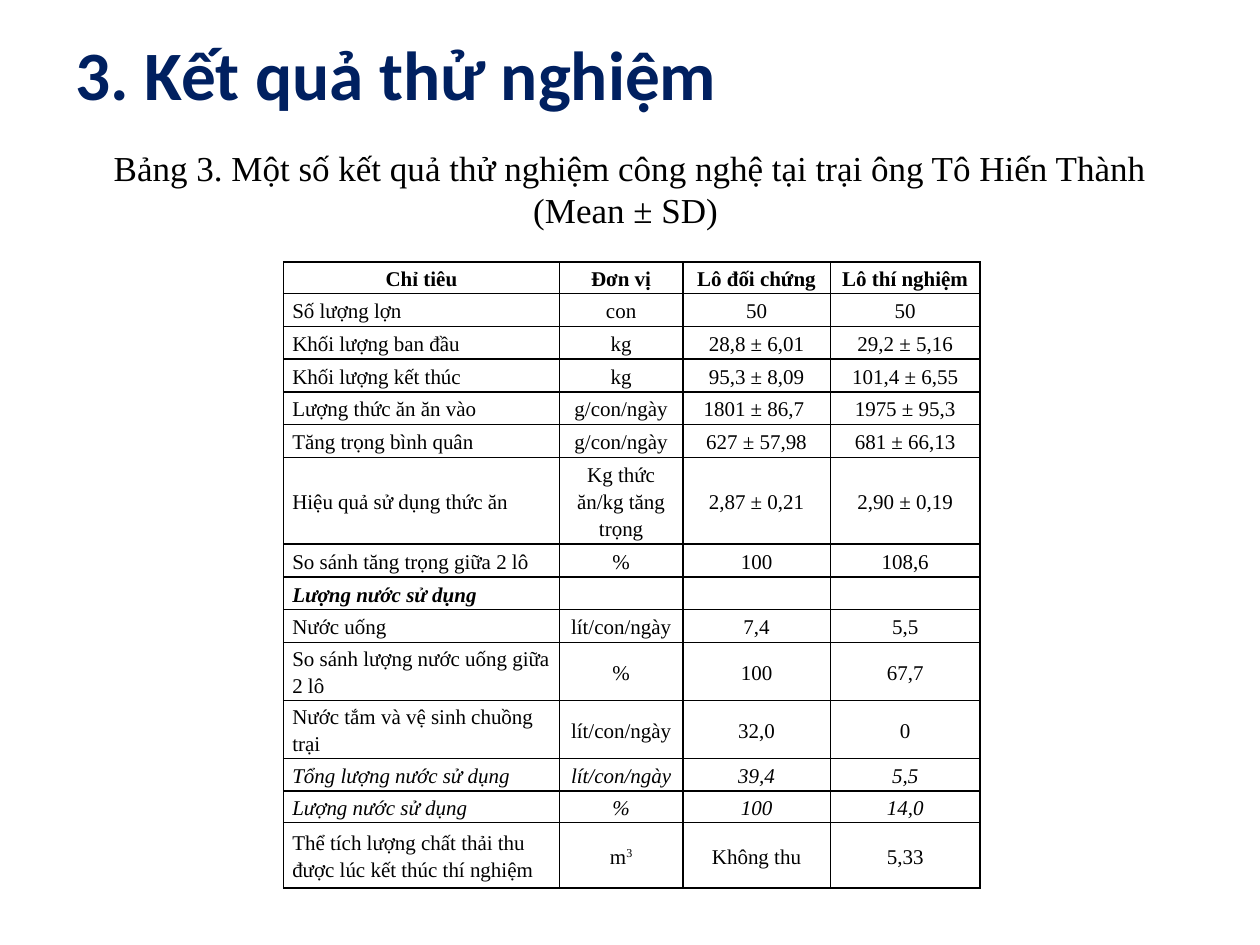
import pptx
import pptx.dml.color
import pptx.enum.text
import pptx.oxml.ns
import pptx.util
from lxml import etree

Inches, Pt = pptx.util.Inches, pptx.util.Pt
ALIGN = pptx.enum.text.PP_ALIGN
ANCHOR = pptx.enum.text.MSO_ANCHOR
qn = pptx.oxml.ns.qn

# Content
COLORS = {"title": "002060", "text": "000000", "border": "000000"}
BODY_FONT = "Times New Roman"
HEADING = "3. Kết quả thử nghiệm"
CAPTION = [
    "Bảng 3. Một số kết quả thử nghiệm công nghệ tại trại ông Tô Hiến Thành",
    "(Mean ± SD) ",
]
COLUMN_WIDTHS = [2.19, 0.98, 1.17, 1.19]
# Each row: height, style letters (b = bold, i = italic), cells
RESULTS = [
    (0.25, "b", ["Chỉ tiêu", "Đơn vị", "Lô đối chứng", "Lô thí nghiệm"]),
    (0.26, "", ["Số lượng lợn", "con", "50", "50"]),
    (0.26, "", ["Khối lượng ban đầu", "kg", "28,8 ± 6,01", "29,2 ± 5,16"]),
    (0.26, "", ["Khối lượng kết thúc", "kg", "95,3 ± 8,09", "101,4 ± 6,55"]),
    (0.26, "", ["Lượng thức ăn ăn vào", "g/con/ngày", "1801 ± 86,7 ", "1975 ± 95,3"]),
    (0.26, "", ["Tăng trọng bình quân", "g/con/ngày", "627 ± 57,98", "681 ± 66,13"]),
    (0.68, "", ["Hiệu quả sử dụng thức ăn", "Kg thức ăn/kg tăng trọng",
                "2,87 ± 0,21", "2,90 ± 0,19"]),
    (0.26, "", ["So sánh tăng trọng giữa 2 lô", "%", "100", "108,6"]),
    (0.26, "bi", ["Lượng nước sử dụng", "", "", ""]),
    (0.26, "", ["Nước uống", "lít/con/ngày", "7,4", "5,5"]),
    (0.46, "", ["So sánh lượng nước uống giữa 2 lô", "%", "100", "67,7"]),
    (0.46, "", ["Nước tắm và vệ sinh chuồng trại", "lít/con/ngày", "32,0", "0"]),
    (0.26, "i", ["Tổng lượng nước sử dụng", "lít/con/ngày", "39,4", "5,5"]),
    (0.25, "i", ["Lượng nước sử dụng", "%", "100", "14,0"]),
    (0.52, "", ["Thể tích lượng chất thải thu được lúc kết thúc thí nghiệm",
                "m^3", "Không thu", "5,33"]),
]


def set_font(paragraph, name, size, color, bold=False, italic=False):
    font = paragraph.font
    font.name, font.size, font.bold, font.italic = name, Pt(size), bold, italic
    font.color.rgb = pptx.dml.color.RGBColor.from_string(COLORS[color])


def add_text(slide, lines, left, top, width, height, inset_top, align, **font):
    frame = slide.shapes.add_textbox(
        Inches(left), Inches(top), Inches(width), Inches(height)).text_frame
    frame.word_wrap = True
    frame.vertical_anchor = ANCHOR.TOP
    frame.margin_top = Inches(inset_top)
    frame.text = "\n".join(lines)
    for paragraph in frame.paragraphs:
        paragraph.alignment = align
        set_font(paragraph, **font)


def add_borders(cell):
    properties = cell._tc.get_or_add_tcPr()
    for index, side in enumerate(("lnL", "lnR", "lnT", "lnB")):
        line = etree.Element(qn("a:" + side), w=str(Pt(1)))
        fill = etree.SubElement(line, qn("a:solidFill"))
        etree.SubElement(fill, qn("a:srgbClr"), val=COLORS["border"])
        properties.insert(index, line)


def fill_cell(cell, text, style, align):
    cell.margin_left = cell.margin_right = Inches(0.07)
    cell.margin_top = cell.margin_bottom = 0
    cell.vertical_anchor = ANCHOR.MIDDLE
    cell.fill.background()
    add_borders(cell)

    paragraph = cell.text_frame.paragraphs[0]
    paragraph.alignment = align
    paragraph.line_spacing = 1.15
    paragraph.space_before = paragraph.space_after = Pt(3)
    set_font(paragraph, BODY_FONT, 12, "text", "b" in style, "i" in style)

    base, _, exponent = text.partition("^")
    if base:
        paragraph.add_run().text = base
    else:  # an empty cell keeps the row's text size
        etree.SubElement(paragraph._p, qn("a:endParaRPr"), sz="1200")
    if exponent:
        raised = paragraph.add_run()
        raised.text = exponent
        raised.font._element.set("baseline", "30000")


def add_results(slide, left, top):
    heights = [height for height, _, _ in RESULTS]
    table = slide.shapes.add_table(
        len(RESULTS), len(COLUMN_WIDTHS), Inches(left), Inches(top),
        Inches(sum(COLUMN_WIDTHS)), Inches(sum(heights))).table
    table.horz_banding = False
    table.first_row = False
    for column, width in zip(table.columns, COLUMN_WIDTHS):
        column.width = Inches(width)
    for r, (height, style, texts) in enumerate(RESULTS):
        table.rows[r].height = Inches(height)
        for c, text in enumerate(texts):
            align = ALIGN.LEFT if c == 0 and r > 0 else ALIGN.CENTER
            fill_cell(table.cell(r, c), text, style, align)


def main():
    deck = pptx.Presentation()
    deck.slide_width, deck.slide_height = Inches(10), Inches(7.5)
    slide = deck.slides.add_slide(deck.slide_layouts[6])

    # Heading, results table, caption
    add_text(slide, [HEADING], 0.5, 0.25, 9, 1.25, 0, ALIGN.LEFT,
             name="Calibri", size=39.6, color="title", bold=True)
    add_results(slide, 2.25, 2.08)
    add_text(slide, CAPTION, 0, 1.08, 10, 1.08, 0.08, ALIGN.CENTER,
             name=BODY_FONT, size=20, color="text")

    deck.save("out.pptx")


if __name__ == "__main__":
    main()
